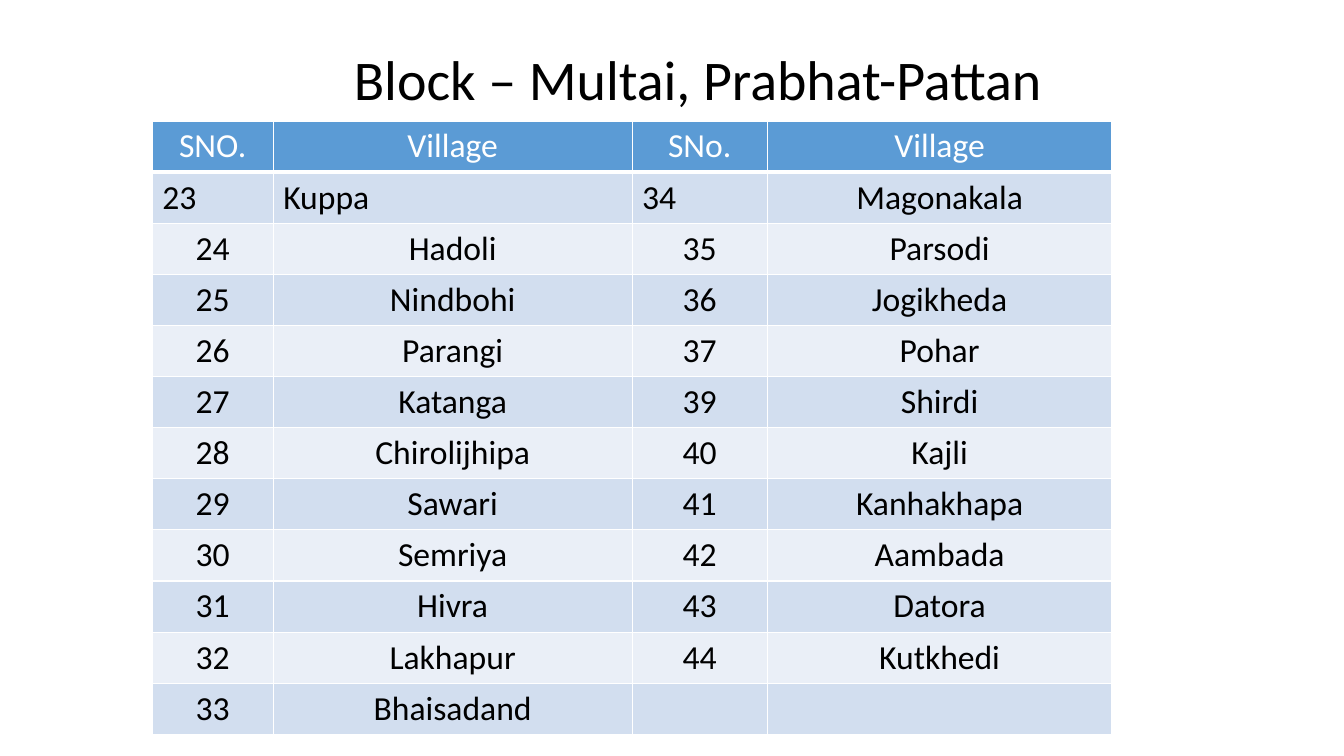
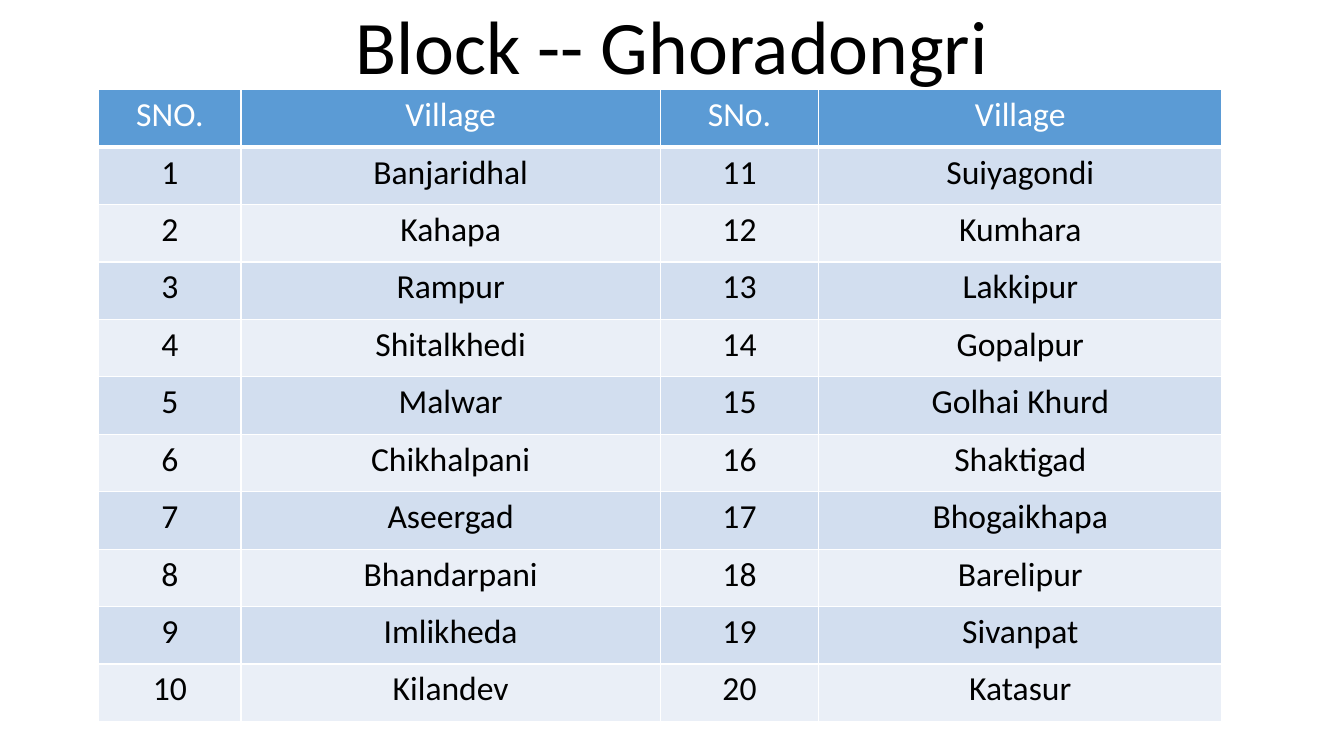
import pptx
import pptx.dml.color
import pptx.enum.text
import pptx.oxml
import pptx.oxml.ns
import pptx.util

Inches = pptx.util.Inches
Pt = pptx.util.Pt
ALIGN = pptx.enum.text.PP_ALIGN

FONT = "Calibri"
COLORS = {
    "text": "000000",
    "header": "5B9BD5",
    "header_text": "FFFFFF",
    "odd_row": "D2DEEF",
    "even_row": "EAEFF7",
    "border": "FFFFFF",
}
HEADINGS = ["SNO.", "Village", "SNo.", "Village"]

MULTAI_LEFT = ["Kuppa", "Hadoli", "Nindbohi", "Parangi", "Katanga", "Chirolijhipa",
               "Sawari", "Semriya", "Hivra", "Lakhapur", "Bhaisadand"]
MULTAI_RIGHT = ["Magonakala", "Parsodi", "Jogikheda", "Pohar", "Shirdi", "Kajli",
                "Kanhakhapa", "Aambada", "Datora", "Kutkhedi"]
GHORADONGRI_LEFT = ["Banjaridhal", "Kahapa", "Rampur", "Shitalkhedi", "Malwar",
                    "Chikhalpani", "Aseergad", "Bhandarpani", "Imlikheda", "Kilandev"]
GHORADONGRI_RIGHT = ["Suiyagondi", "Kumhara", "Lakkipur", "Gopalpur", "Golhai Khurd",
                     "Shaktigad", "Bhogaikhapa", "Barelipur", "Sivanpat", "Katasur"]


def rgb(name):
    return pptx.dml.color.RGBColor.from_string(COLORS[name])


def set_text(tf, text, size=24, color="text", align=ALIGN.CENTER, line_spacing=None):
    p = tf.paragraphs[0]
    p.alignment = align
    p.line_spacing = line_spacing
    r = p.add_run()
    r.text = text
    r.font.name = FONT
    r.font.size = Pt(size)
    r.font.bold = False
    r.font.color.rgb = rgb(color)


def set_borders(cell, top=1, bottom=1):
    """Draw the four cell borders; call before the fill, which must follow them."""
    tc_pr = cell._tc.get_or_add_tcPr()
    for side, width in (("L", 1), ("R", 1), ("T", top), ("B", bottom)):
        tc_pr.append(pptx.oxml.parse_xml(
            f'<a:ln{side} {pptx.oxml.ns.nsdecls("a")} w="{Pt(width)}"><a:solidFill>'
            f'<a:srgbClr val="{COLORS["border"]}"/></a:solidFill></a:ln{side}>'))


def add_title(slide, text, box, size):
    sp = slide.shapes.title
    sp.left, sp.top, sp.width, sp.height = map(Inches, box)
    tf = sp.text_frame
    tf.word_wrap = True
    tf.auto_size = pptx.enum.text.MSO_AUTO_SIZE.NONE
    tf.vertical_anchor = pptx.enum.text.MSO_ANCHOR.BOTTOM
    set_text(tf, text, size=size, line_spacing=0.9)


def pair_columns(left, right):
    """Put two numbered lists side by side, filling the shorter one with blanks."""
    blanks = [("", "")] * (len(left) - len(right))
    return [(*a, *b) for a, b in zip(left, right + blanks)]


def number(numbers, villages):
    return [(str(n), village) for n, village in zip(numbers, villages)]


def add_village_table(slide, rows, left, top, col_widths, row_height, left_aligned=()):
    """left_aligned holds the (row, column) places that are not centred."""
    rows = [HEADINGS, *rows]
    table = slide.shapes.add_table(
        len(rows), len(HEADINGS), Inches(left), Inches(top),
        Inches(sum(col_widths)), Inches(row_height * len(rows))).table
    for column, width in zip(table.columns, col_widths):
        column.width = Inches(width)
    for i, values in enumerate(rows):
        table.rows[i].height = Inches(row_height)
        fill = "header" if i == 0 else "odd_row" if i % 2 else "even_row"
        for j, value in enumerate(values):
            cell = table.cell(i, j)
            set_borders(cell, top=3 if i == 1 else 1, bottom=3 if i == 0 else 1)
            cell.fill.solid()
            cell.fill.fore_color.rgb = rgb(fill)
            if value:
                set_text(cell.text_frame, value,
                         color="text" if i else "header_text",
                         align=ALIGN.LEFT if (i, j) in left_aligned else ALIGN.CENTER)


def add_block_slide(prs, title, title_box, title_size, **table_format):
    slide = prs.slides.add_slide(prs.slide_layouts.get_by_name("Title Only"))
    add_title(slide, title, title_box, title_size)
    add_village_table(slide, **table_format)


def main():
    prs = pptx.Presentation()
    prs.slide_width, prs.slide_height = Inches(13.33), Inches(7.5)
    add_block_slide(
        prs, "Block – Multai, Prabhat-Pattan", (2.67, 0.42, 8.5, 0.75), 40,
        rows=pair_columns(number(range(23, 34), MULTAI_LEFT),
                          number([*range(34, 38), *range(39, 45)], MULTAI_RIGHT)),
        left=1.51, top=1.2, col_widths=(1.2, 3.56, 1.34, 3.42), row_height=0.5,
        left_aligned={(1, 0), (1, 1), (1, 2)})
    add_block_slide(
        prs, "Block -- Ghoradongri", (0, 0, 13.33, 0.95), 54,
        rows=pair_columns(number(range(1, 11), GHORADONGRI_LEFT),
                          number(range(11, 21), GHORADONGRI_RIGHT)),
        left=0.98, top=0.89, col_widths=(1.41, 4.16, 1.57, 4), row_height=0.57)
    prs.save("out.pptx")


if __name__ == "__main__":
    main()
